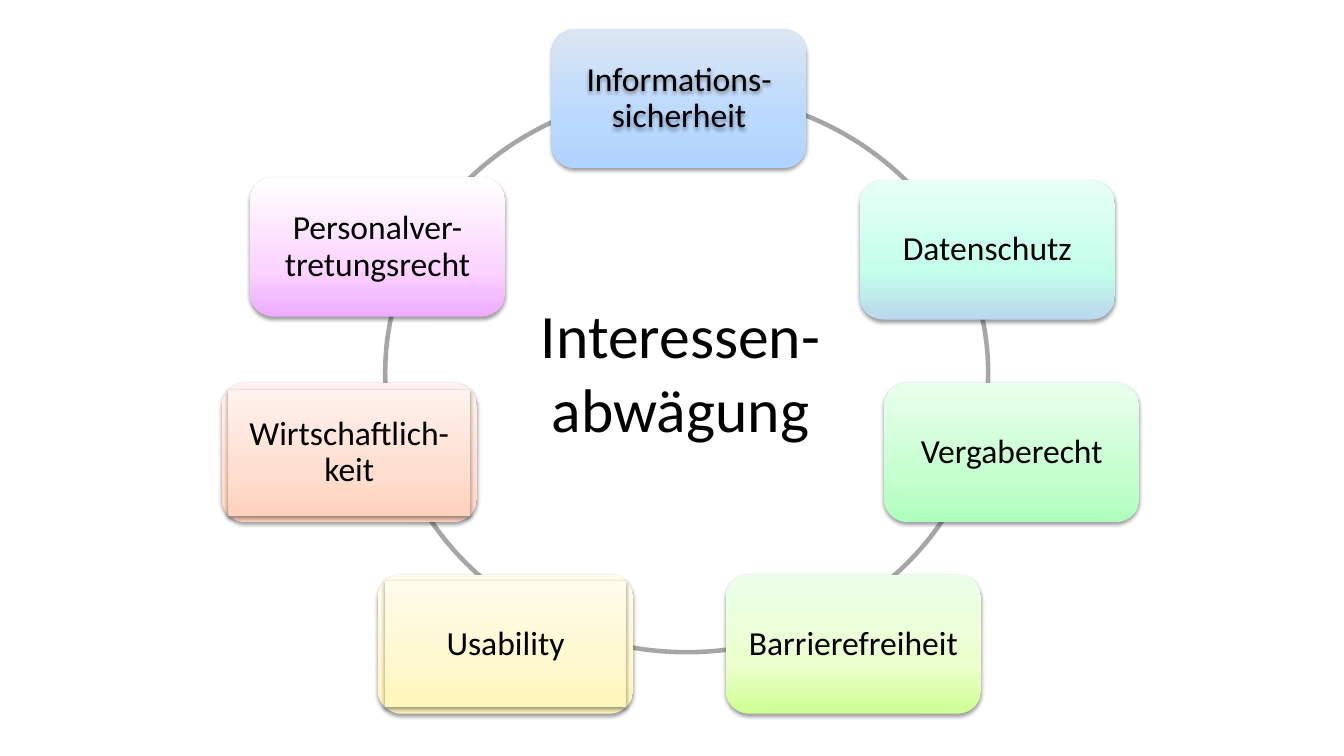
from lxml import etree
from pptx import Presentation
from pptx.dml.color import RGBColor
from pptx.enum.shapes import MSO_SHAPE
from pptx.enum.text import MSO_ANCHOR, PP_ALIGN
from pptx.oxml.ns import qn
from pptx.util import Inches, Pt

ELLIPSE, RECTANGLE, ROUNDED = MSO_SHAPE.OVAL, MSO_SHAPE.RECTANGLE, MSO_SHAPE.ROUNDED_RECTANGLE
MIDDLE, CENTER = MSO_ANCHOR.MIDDLE, PP_ALIGN.CENTER

# Content: label, centre in percent of the slide, gradient from bottom to top, caption style
TITLE = "Interessen-abwägung"
TOPICS = [
    ("Informations-sicherheit", (50.53, 13.07), ("AFD3FF", "B9D9FF", "DCE6F2"), "shadow"),
    ("Datenschutz", (73.46, 33.07), ("B9D8ED", "C3FFEA", "E8FFF7"), "plain"),
    ("Vergaberecht", (75.28, 59.87), ("AEFFBD", "C6FFD0", "E9FFED"), "plain"),
    ("Barrierefreiheit", (63.5, 85.2), ("CDFE92", "ECFFCD", "ECFFEA"), "plain"),
    ("Usability", (37.62, 85.2), ("FFF6B9", "FFF8CE", "FFFCEC"), "panel"),
    ("Wirtschaftlich-keit", (25.99, 59.87), ("FFD2BD", "FFDED0", "FFF2ED"), "panel"),
    ("Personalver-tretungsrecht", (28.09, 32.67), ("EDABFF", "FCD5FF", "FFFFFF"), "plain"),
]

# Centres and sizes in percent of the slide
RING_CENTER, RING_SIZE = (51.09, 49.27), (44.86, 74)
TITLE_CENTER, TITLE_SIZE = (50.64, 49.2), (26.41, 21.07)
CARD_SIZE, CAPTION_SIZE = (18.98, 18.4), (18, 16.67)

THEME = {
    "font": "Calibri", "text": "000000", "ring": "A6A6A6", "shadow": "000000",
    "title_size": 44, "caption_size": 24, "ring_width": 3.25,
    "gradient_positions": (0, 35, 100),
}

presentation = Presentation()
presentation.slide_width, presentation.slide_height = Inches(13.33), Inches(7.5)
slide = presentation.slides.add_slide(presentation.slide_layouts[6])


def box(center, size):
    """Turn a centre and size in percent into left, top, width, height."""
    width = presentation.slide_width * size[0] / 100
    height = presentation.slide_height * size[1] / 100
    left = presentation.slide_width * center[0] / 100 - width / 2
    top = presentation.slide_height * center[1] / 100 - height / 2
    return [int(length) for length in (left, top, width, height)]


def add_color(parent, color):
    return etree.SubElement(parent, qn("a:srgbClr"), val=color)


def add_shadow(shape):
    shape.shadow.inherit = False
    effects = shape._element.spPr.find(qn("a:effectLst"))
    shadow = etree.SubElement(effects, qn("a:outerShdw"), blurRad=str(Pt(3.1)),
                              dist=str(Pt(1.6)), dir="5400000", rotWithShape="0")
    etree.SubElement(add_color(shadow, THEME["shadow"]), qn("a:alpha"), val="38000")


def add_panel(kind, center, size, colors):
    shape = slide.shapes.add_shape(kind, *box(center, size))
    shape.fill.gradient()
    shape.fill.gradient_angle = 90
    stops = shape._element.spPr.find(qn("a:gradFill")).find(qn("a:gsLst"))
    for stop in list(stops):
        stops.remove(stop)
    for position, color in zip(THEME["gradient_positions"], colors):
        add_color(etree.SubElement(stops, qn("a:gs"), pos=str(position * 1000)), color)
    shape.line.fill.background()
    add_shadow(shape)
    return shape


def write(shape, text, size):
    frame = shape.text_frame
    frame.word_wrap = True
    frame.text = text
    paragraph = frame.paragraphs[0]
    paragraph.alignment = CENTER
    font = paragraph.runs[0].font
    font.name, font.size = THEME["font"], Pt(size)
    font.color.rgb = RGBColor.from_string(THEME["text"])
    return frame


# Ring behind the cards
ring = slide.shapes.add_shape(ELLIPSE, *box(RING_CENTER, RING_SIZE))
ring.fill.background()
ring.line.color.rgb = RGBColor.from_string(THEME["ring"])
ring.line.width = Pt(THEME["ring_width"])
ring.shadow.inherit = False

# Topic cards with their captions
for label, center, colors, style in TOPICS:
    add_panel(ROUNDED, center, CARD_SIZE, colors).adjustments[0] = 0.17
    if style == "panel":
        caption = add_panel(RECTANGLE, center, CAPTION_SIZE, colors)
    else:
        caption = slide.shapes.add_textbox(*box(center, CAPTION_SIZE))
    if style == "shadow":
        add_shadow(caption)
    frame = write(caption, label, THEME["caption_size"])
    frame.vertical_anchor = MIDDLE
    frame.margin_left = frame.margin_right = Inches(0.1)
    frame.margin_top = frame.margin_bottom = Inches(0.1)
    frame.paragraphs[0].line_spacing = 0.9

# Title in the middle of the ring
title = slide.shapes.add_textbox(*box(TITLE_CENTER, TITLE_SIZE))
write(title, TITLE, THEME["title_size"])

presentation.save("out.pptx")
